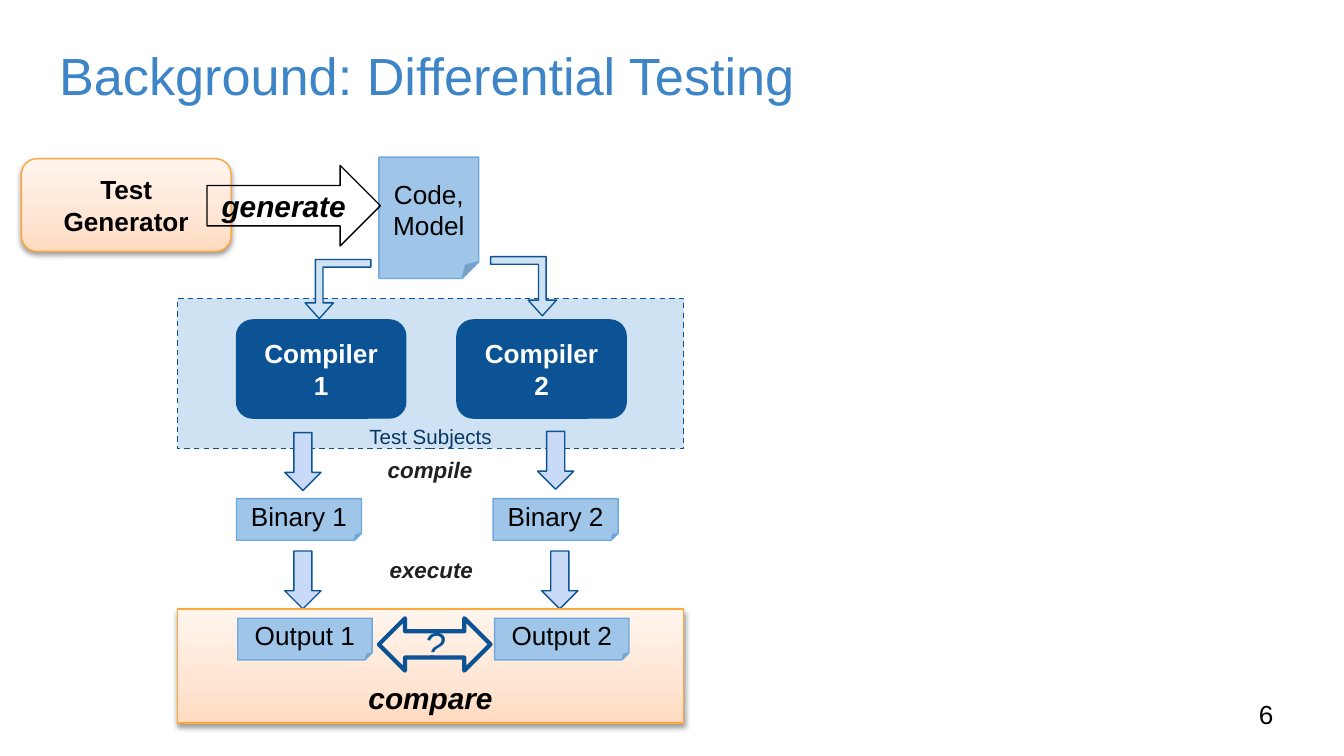
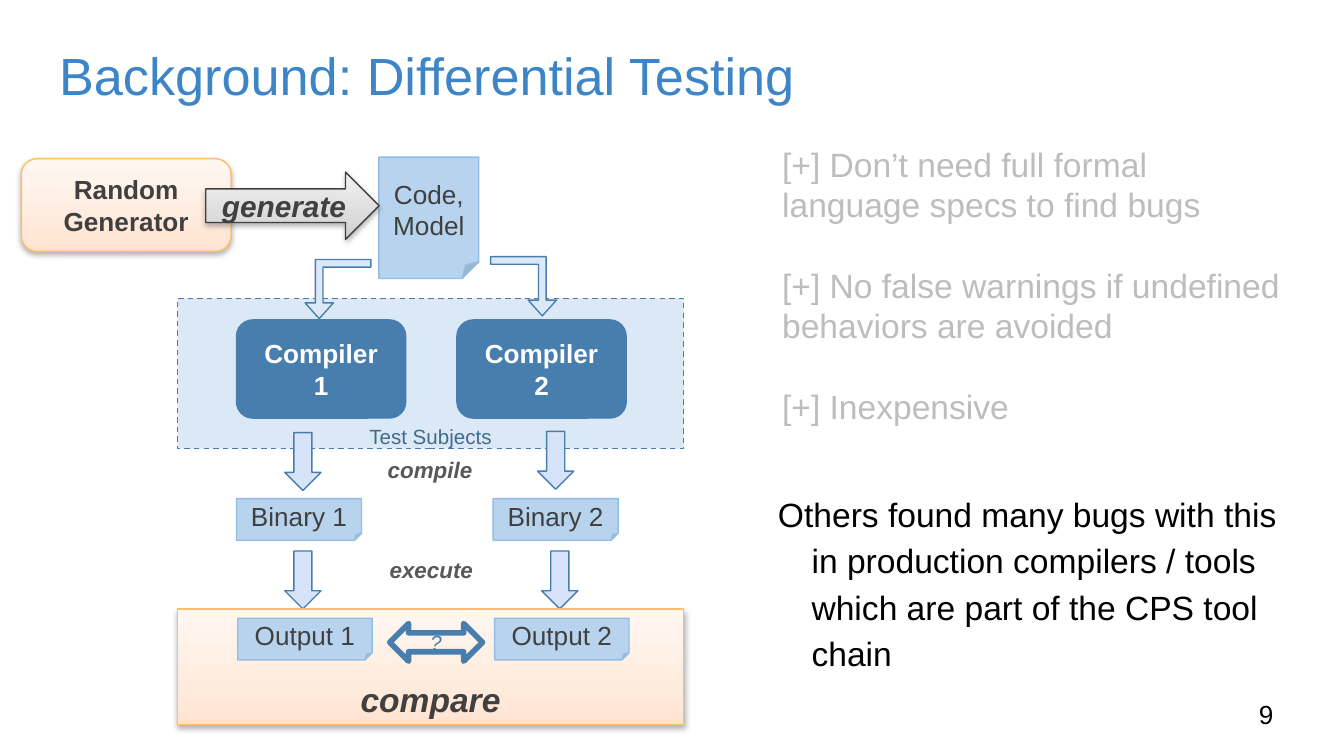
from copy import deepcopy

from lxml import etree
from pptx import Presentation
from pptx.dml.color import RGBColor
from pptx.enum.dml import MSO_LINE
from pptx.enum.shapes import MSO_SHAPE
from pptx.enum.text import MSO_ANCHOR, MSO_AUTO_SIZE, PP_ALIGN
from pptx.oxml.ns import qn
from pptx.util import Pt

RECT, ROUND = MSO_SHAPE.RECTANGLE, MSO_SHAPE.ROUNDED_RECTANGLE
NOTE, PROC = MSO_SHAPE.FOLDED_CORNER, MSO_SHAPE.FLOWCHART_ALTERNATE_PROCESS
DOWN, RIGHT = MSO_SHAPE.DOWN_ARROW, MSO_SHAPE.RIGHT_ARROW
BOTH, BENT = MSO_SHAPE.LEFT_RIGHT_ARROW, MSO_SHAPE.BENT_UP_ARROW
TOP, MID, LOW = MSO_ANCHOR.TOP, MSO_ANCHOR.MIDDLE, MSO_ANCHOR.BOTTOM
LEFT, CENTER = PP_ALIGN.LEFT, PP_ALIGN.CENTER

# Colours
FONT = "Arial"
BLACK, WHITE, GREY = "000000", "FFFFFF", "BDBDBD"
SKY, NAVY, DEEP, PALE = "3D85C6", "0B5394", "073763", "CFE2F3"
ICE, SHEET, EDGE = "C9DAF8", "9FC5E8", "6FA8DC"
ORANGE, DARK = "FEA83A", "212121"
PEACH = ("FFDAC0", "FFE5D3", "FFF5EE")
SILVER = ("BDBDBD", "D1D1D1", "EEEEEE")

# Content
TITLE = "Background: Differential Testing"
PROS = [
    "[+] Don’t need full formal language specs to find bugs",
    "[+] No false warnings if undefined behaviors are avoided",
    "[+] Inexpensive",
]
FOUND = ("Others found many bugs with this in production compilers / tools "
         "which are part of the CPS tool chain")
SLIDES = [
    dict(page="6", maker="Test Generator", push=(110.9, 88.6, 92.9, 43.2),
         tone=None, base=61.2, size=16, low=4,
         swap=(203, 331.2, 59.8, 28.1), width=2.25, ask=20, pros=[]),
    dict(page="9", maker="Random Generator", push=(110.2, 92.2, 92.9, 36),
         tone=SILVER, base=62, size=18, low=3,
         swap=(208.8, 334, 49.7, 20.2), width=3, ask=11, pros=PROS),
]

# Twin parts: left, top, width, height
COMPS = [("Compiler 1", 126.7), ("Compiler 2", 244.8)]
NOTES = [
    ("Code, Model", (203, 84.2, 53.5, 65)),
    ("Binary 1", (126.7, 267.1, 67, 22.3)),
    ("Binary 2", (264.2, 267.1, 67, 22.3)),
    ("Output 1", (127.4, 331.2, 72, 22.3)),
    ("Output 2", (265, 331.2, 72, 22.3)),
]
DROPS = [(152.6, 231.8), (288, 231.1), (152.6, 295.2), (290.2, 295.2)]
BENDS = [(163.4, 139, False), (262.8, 137.5, True)]
STEPS = [("compile", 193.7, 239.8), ("execute", 194.4, 293)]


def paint(hue):
    return RGBColor.from_string(hue)


def write(shape, text, size=14, hue=BLACK, bold=False, slant=False,
          align=CENTER, anchor=MID, pad=(7.2, 7.2), low=None, gap=0,
          lines=None, after=0, hang=None):
    """Fill a shape with one paragraph, or one for each item of a list."""
    frame = shape.text_frame
    frame.word_wrap = True
    frame.auto_size = MSO_AUTO_SIZE.NONE
    frame.vertical_anchor = anchor
    frame.margin_left = frame.margin_right = Pt(pad[0])
    frame.margin_top = Pt(pad[1])
    frame.margin_bottom = Pt(pad[1] if low is None else low)
    for i, item in enumerate([text] if isinstance(text, str) else text):
        para = frame.paragraphs[0] if i == 0 else frame.add_paragraph()
        para.alignment = align
        para.space_before = Pt(gap if i else 0)
        para.space_after = Pt(after)
        if lines:
            para.line_spacing = lines
        if hang:
            props = para._p.get_or_add_pPr()
            props.set("marL", str(Pt(hang[0])))
            props.set("indent", str(Pt(hang[1])))
            etree.SubElement(props, qn("a:buNone"))
        run = para.add_run()
        run.text = item
        font = run.font
        font.name, font.size = FONT, Pt(size)
        font.bold, font.italic = bold, slant
        font.color.rgb = paint(hue)


def place(shape, box):
    shape.left, shape.top, shape.width, shape.height = map(Pt, box)


def blend(shape, hues):
    """Three-stop gradient that rises from the bottom edge."""
    shape.fill.gradient()
    shape.fill.gradient_angle = 90
    stops = shape.element.spPr.find(".//" + qn("a:gsLst"))
    stops.append(deepcopy(stops[-1]))
    for stop, spot, hue in zip(shape.fill.gradient_stops, (0, 0.35, 1), hues):
        stop.position = spot
        stop.color.rgb = paint(hue)


def shade(shape):
    """Soft shadow below the shape."""
    effects = shape.element.spPr.find(qn("a:effectLst"))
    drop = etree.SubElement(
        effects, qn("a:outerShdw"), blurRad=str(Pt(3.1)), dist=str(Pt(1.6)),
        dir="5400000", rotWithShape="0")
    color = etree.SubElement(drop, qn("a:srgbClr"), val=BLACK)
    etree.SubElement(color, qn("a:alpha"), val="38000")


def draw(slide, kind, box, fill=None, line=None, width=0.75):
    shape = slide.shapes.add_shape(kind, *map(Pt, box))
    shape.shadow.inherit = False
    if isinstance(fill, tuple):
        blend(shape, fill)
        shade(shape)
    elif fill:
        shape.fill.solid()
        shape.fill.fore_color.rgb = paint(fill)
    else:
        shape.fill.background()
    if line:
        shape.line.color.rgb = paint(line)
        shape.line.width = Pt(width)
    else:
        shape.line.fill.background()
    return shape


def label(slide, box, text, **form):
    write(slide.shapes.add_textbox(*map(Pt, box)), text, **form)


def chart_flow(slide, data):
    """Draw the testing flow from generator to comparison."""
    # Arrows into the comparison
    for x, y in DROPS[2:]:
        draw(slide, DOWN, (x, y, 19.4, 31), ICE, NAVY)

    # Bands
    base = draw(slide, RECT, (95, 326.2, 271.4, data["base"]), PEACH, ORANGE)
    write(base, "compare", size=data["size"], bold=True, slant=True,
          anchor=LOW, low=data["low"])
    band = draw(slide, RECT, (95, 159.8, 271.4, 80.6), PALE, NAVY)
    band.line.dash_style = MSO_LINE.DASH
    write(band, "Test Subjects", size=11, hue=DEEP, anchor=LOW, low=0)

    # Compilers, sheets and arrows
    for text, x in COMPS:
        comp = draw(slide, PROC, (x, 171.4, 90.7, 52.6), NAVY, NAVY)
        write(comp, text, hue=WHITE, bold=True)
    for text, box in NOTES:
        write(draw(slide, NOTE, box, SHEET, EDGE), text, pad=(4, 7.2))
    for x, y, flip in BENDS:
        bend = draw(slide, BENT, (x, y, 35.3, 31.7), PALE, NAVY)
        for i, value in enumerate((0.128, 0.239, 0.266)):
            bend.adjustments[i] = value
        bend.rotation = 180
        if flip:
            bend.element.spPr.find(qn("a:xfrm")).set("flipH", "1")
    for x, y in DROPS[:2]:
        draw(slide, DOWN, (x, y, 19.4, 31), ICE, NAVY)
    swap = draw(slide, BOTH, data["swap"], None, NAVY, data["width"])
    write(swap, "?", size=data["ask"], hue=NAVY, slant=True)

    # Generator
    maker = draw(slide, ROUND, (11.5, 85, 112.3, 49.7), PEACH, ORANGE)
    write(maker, data["maker"], bold=True, pad=(7.2, 3.6))
    push = draw(slide, RIGHT, data["push"], data["tone"], BLACK)
    write(push, "generate", size=16, bold=True, slant=True, pad=(7.2, 3.6))

    # Step names
    for text, x, y in STEPS:
        label(slide, (x, y, 73.4, 23.8), text, size=12, hue=DARK, bold=True,
              slant=True, pad=(7.2, 3.6))


def add_pros(slide, pros):
    """Fade the flow and list the benefits beside it."""
    body = slide.placeholders[1]
    place(body, (411.8, 69.8, 283.7, 193.7))
    write(body, pros, size=18, hue=GREY, align=LEFT, anchor=TOP, gap=21.6,
          hang=(0, 0))
    veil = draw(slide, RECT, (2.9, 59.8, 394.6, 336.2), WHITE)
    color = veil.element.spPr.find(qn("a:solidFill"))[0]
    etree.SubElement(color, qn("a:alpha"), val="25000")
    label(slide, (391.7, 257.8, 315.4, 105.1), FOUND, size=18, align=LEFT,
          anchor=TOP, pad=(7.2, 3.6), lines=1.15, after=16, hang=(36, -18))


def main():
    deck = Presentation()
    deck.slide_width, deck.slide_height = Pt(720), Pt(405)
    for data in SLIDES:
        slide = deck.slides.add_slide(
            deck.slide_layouts[1 if data["pros"] else 5])
        title = slide.shapes.title
        place(title, (24.5, 10.8, 671, 45.4))
        write(title, TITLE, size=28, hue=SKY, align=LEFT, anchor=TOP,
              lines=1.15, after=16)
        label(slide, (667.4, 367.2, 43.2, 31), data["page"], align=LEFT)
        chart_flow(slide, data)
        if data["pros"]:
            add_pros(slide, data["pros"])
    deck.save("out.pptx")


if __name__ == "__main__":
    main()
